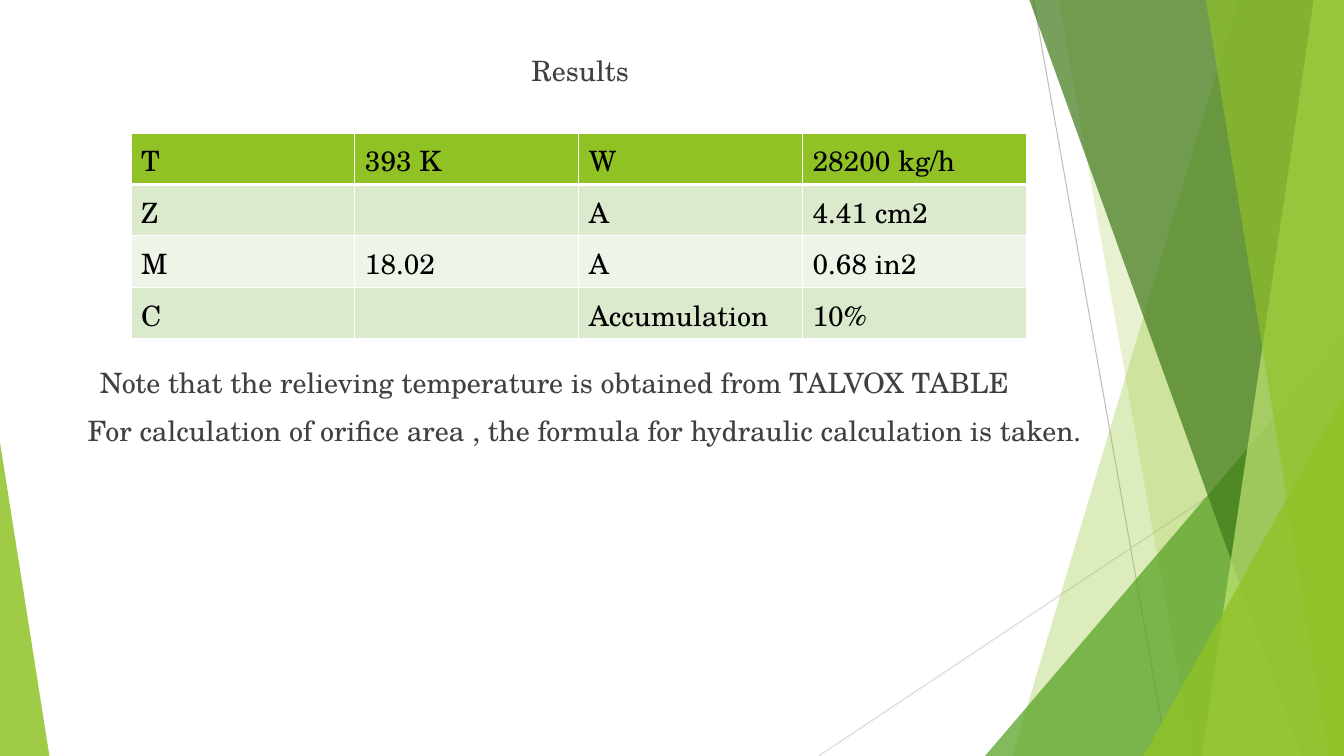
from lxml import etree
from pptx import Presentation
from pptx.dml.color import RGBColor
from pptx.enum import shapes, text
from pptx.oxml import ns
from pptx.util import Inches, Pt

FONT = "TeX Gyre Schola"
BLACK = RGBColor(0x00, 0x00, 0x00)
DARK_GRAY = RGBColor(0x40, 0x40, 0x40)
MID_GRAY = RGBColor(0xBF, 0xBF, 0xBF)
LIGHT_GRAY = RGBColor(0xD9, 0xD9, 0xD9)
LIME = RGBColor(0x90, 0xC2, 0x26)
PALE_LIME = RGBColor(0xC0, 0xE4, 0x74)
GREEN = RGBColor(0x54, 0xA0, 0x21)
DARK_GREEN = RGBColor(0x3F, 0x78, 0x19)
BAND_DARK = RGBColor(0xDB, 0xE9, 0xCD)
BAND_LIGHT = RGBColor(0xEE, 0xF4, 0xE8)
WIDTH, HEIGHT = 13.33, 7.5


def add_span(para, words, color):
    span = para.add_run()
    span.text = words
    span.font.name = FONT
    span.font.size = Pt(20)
    span.font.color.rgb = color


def add_text_box(left, top, width, height):
    box = page.shapes.add_textbox(Inches(left), Inches(top), Inches(width), Inches(height))
    frame = box.text_frame
    frame.word_wrap = True
    frame.margin_left = frame.margin_right = frame.margin_top = frame.margin_bottom = 0
    return frame


deck = Presentation()
deck.slide_width, deck.slide_height = Inches(WIDTH), Inches(HEIGHT)
page = deck.slides.add_slide(deck.slide_layouts[6])

# Thin background lines
for x1, y1, x2, y2, color in [
    (10.25, 0, 11.58, HEIGHT, MID_GRAY),
    (WIDTH, 4.03, 8.12, HEIGHT, LIGHT_GRAY),
]:
    line = page.shapes.add_connector(
        shapes.MSO_CONNECTOR.STRAIGHT, Inches(x1), Inches(y1), Inches(x2), Inches(y2))
    line.line.color.rgb = color
    line.line.width = Pt(0.75)
    etree.SubElement(line._element.spPr, ns.qn("a:effectLst"))

# Translucent facets: a band takes its top and bottom left corners,
# a triangle its left, top, width and apex position
for kind, geometry, color, opacity in [
    ("band", (12.28, 10.04), LIME, 30),
    ("band", (10.5, 11.83), LIME, 20),
    ("triangle", (9.77, 3.33, 3.56, 1), GREEN, 72),
    ("band", (10.21, 12.91), DARK_GREEN, 70),
    ("band", (13.03, 11.92), PALE_LIME, 70),
    ("band", (11.96, 13.18), LIME, 65),
    ("triangle", (11.34, 3.93, 1.99, 1), LIME, 80),
    ("triangle", (0, 4.39, 0.49, 0), LIME, 85),
]:
    if kind == "band":
        top_x, bottom_x = geometry
        outline = page.shapes.build_freeform(Inches(top_x), 0)
        outline.add_line_segments(
            [(Inches(x), Inches(y)) for x, y in
             [(WIDTH, 0), (WIDTH, HEIGHT), (bottom_x, HEIGHT)]], close=True)
        facet = outline.convert_to_shape()
    else:
        left, top, width, apex = geometry
        facet = page.shapes.add_shape(
            shapes.MSO_SHAPE.ISOSCELES_TRIANGLE,
            Inches(left), Inches(top), Inches(width), Inches(HEIGHT - top))
        facet.adjustments[0] = apex
    facet.shadow.inherit = False
    facet.line.fill.background()
    facet.fill.solid()
    facet.fill.fore_color.rgb = color
    fill_color = facet._element.spPr.find(".//" + ns.qn("a:srgbClr"))
    etree.SubElement(fill_color, ns.qn("a:alpha"), val=str(opacity * 1000))

# Heading
heading = add_text_box(5.27, 0.53, 2, 0.34)
add_span(heading.paragraphs[0], "Results", DARK_GRAY)

# Notes below the table
notes = add_text_box(0.87, 3.63, 10.3, 0.82)
first_note, second_note = notes.paragraphs[0], notes.add_paragraph()
first_note._p.get_or_add_pPr().set("marL", str(Inches(0.12)))
add_span(first_note, "Note that the relieving temperature is obtained from TALVOX TABLE", DARK_GRAY)
second_note.space_before = Pt(10)
add_span(second_note,
         "For calculation of orifice area , the formula for hydraulic calculation is taken.",
         DARK_GRAY)

# Results table
rows = [
    ("T", "393 K", "W", "28200 kg/h"),
    ("Z", "", "A", "4.41 cm2"),
    ("M", "18.02", "A", "0.68 in2"),
    ("C", "", "Accumulation", "10%"),
]
row_fills = [LIME, BAND_DARK, BAND_LIGHT, BAND_DARK]
table = page.shapes.add_table(
    4, 4, Inches(1.3), Inches(1.32), Inches(8.88), Inches(2.04)).table
for row_index, values in enumerate(rows):
    table.rows[row_index].height = Inches(0.51)
    for column_index, value in enumerate(values):
        cell = table.cell(row_index, column_index)
        cell.fill.solid()
        cell.fill.fore_color.rgb = row_fills[row_index]
        cell.vertical_anchor = text.MSO_ANCHOR.MIDDLE
        cell.margin_top, cell.margin_bottom = Inches(0.07), Inches(0.04)
        if value:
            add_span(cell.text_frame.paragraphs[0], value, BLACK)
        else:
            cell.text_frame.paragraphs[0].font.size = Pt(20)

        # White borders, thicker under the header row
        widths = {"lnL": 1, "lnR": 1,
                  "lnT": 3 if row_index == 1 else 1,
                  "lnB": 3 if row_index == 0 else 1}
        properties = cell._tc.get_or_add_tcPr()
        for position, (side, points) in enumerate(widths.items()):
            border = etree.Element(ns.qn("a:" + side), w=str(Pt(points)))
            paint = etree.SubElement(border, ns.qn("a:solidFill"))
            etree.SubElement(paint, ns.qn("a:srgbClr"), val="FFFFFF")
            properties.insert(position, border)

deck.save("out.pptx")
